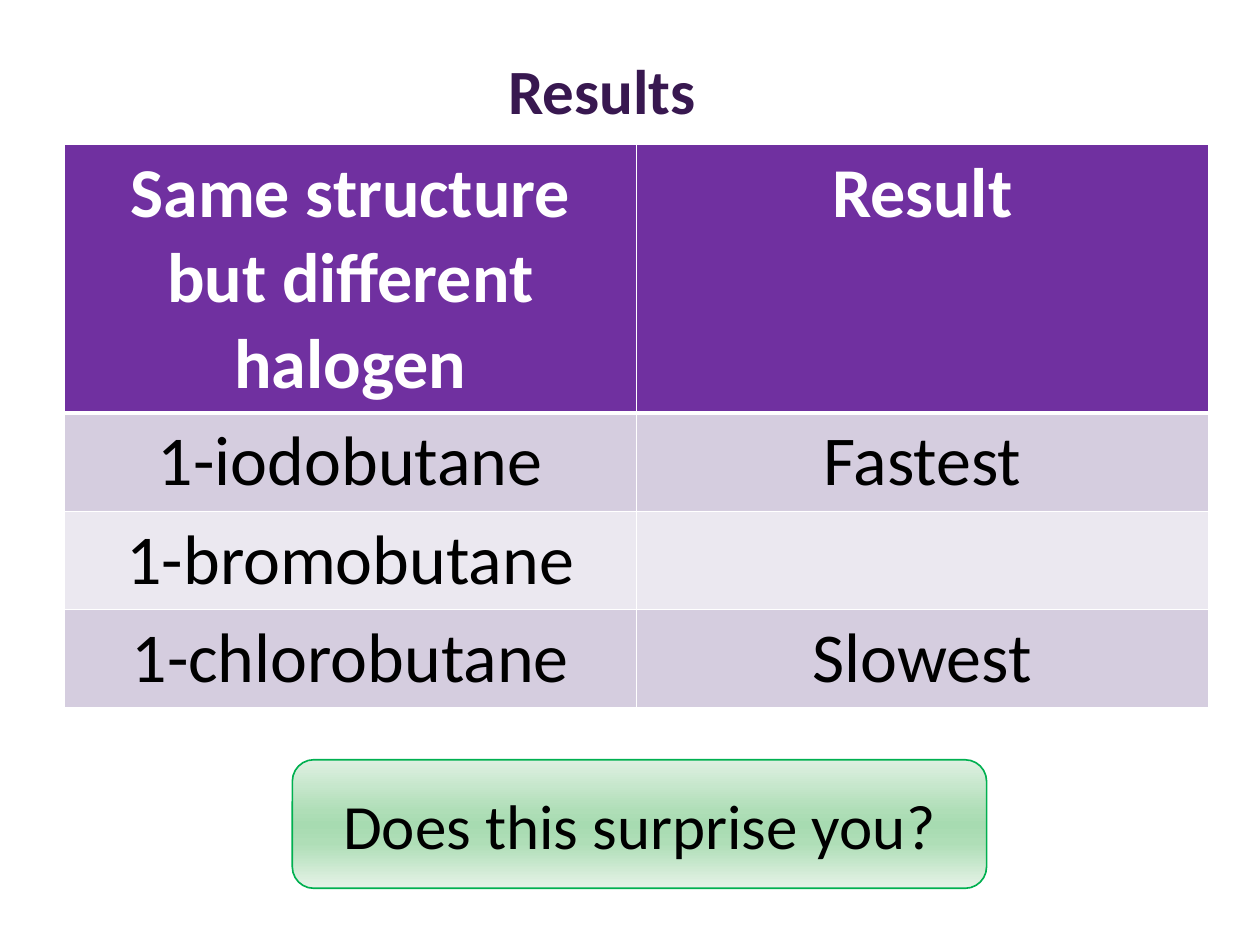
from dataclasses import dataclass

from lxml.etree import SubElement
from pptx import Presentation
from pptx.dml.color import RGBColor
from pptx.enum.shapes import MSO_SHAPE as Shape
from pptx.enum.text import MSO_ANCHOR as Anchor, PP_ALIGN as Align
from pptx.oxml import parse_xml
from pptx.oxml.ns import nsdecls, qn
from pptx.util import Inches, Pt

WIDTH, HEIGHT = Inches(10), Inches(7.5)
FONT = "Calibri"
COLORS = {
    "title": "381850",
    "header": "7030A0",
    "band_dark": "D5CDDF",
    "band_light": "EBE8F0",
    "white": "FFFFFF",
    "black": "000000",
    "outline": "00B050",
}
# Gradient position in percent and colour, from top to bottom
GREEN_STOPS = [(0, "DFF0E2"), (40, "AFDEB7"), (50, "A7DBB1"), (65, "AFDEB7"), (100, "E6F3E8")]
ROWS = [
    ("Same structure but different halogen", "Result"),
    ("1-iodobutane", "Fastest"),
    ("1-bromobutane", ""),
    ("1-chlorobutane", "Slowest"),
]
HEADER_HEIGHT, BODY_HEIGHT = Inches(2.11), Inches(0.78)


@dataclass(frozen=True)
class Box:
    """A rectangle in shares of the slide's width and height."""
    left: float
    top: float
    width: float
    height: float

    def lengths(self) -> tuple:
        return (int(self.left * WIDTH), int(self.top * HEIGHT),
                int(self.width * WIDTH), int(self.height * HEIGHT))


@dataclass(frozen=True)
class TextStyle:
    size: int
    color: str
    bold: bool = False


TITLE_BOX = Box(0.028, 0.048, 0.9, 0.093)
TABLE_BOX = Box(0.051, 0.153, 0.908, 0.59)
QUESTION_BOX = Box(0.232, 0.804, 0.551, 0.136)


def rgb(name: str) -> RGBColor:
    return RGBColor.from_string(COLORS[name])


def write(text_frame, text: str, style: TextStyle) -> None:
    paragraph = text_frame.paragraphs[0]
    paragraph.alignment = Align.CENTER
    if not text:
        paragraph.font.size = Pt(style.size)
        return
    run = paragraph.add_run()
    run.text = text
    run.font.name = FONT
    run.font.size = Pt(style.size)
    run.font.bold = style.bold
    run.font.color.rgb = rgb(style.color)


def set_borders(cell, top: float, bottom: float) -> None:
    properties = cell._tc.get_or_add_tcPr()
    for index, (side, points) in enumerate([("L", 1), ("R", 1), ("T", top), ("B", bottom)]):
        properties.insert(index, parse_xml(
            f'<a:ln{side} {nsdecls("a")} w="{Pt(points)}"><a:solidFill>'
            f'<a:srgbClr val="{COLORS["white"]}"/></a:solidFill></a:ln{side}>'))


def set_gradient(shape, stops: list) -> None:
    shape.fill.gradient()
    gradient = shape._element.spPr.find(qn("a:gradFill"))
    stop_list = gradient.find(qn("a:gsLst"))
    for stop in list(stop_list):
        stop_list.remove(stop)
    for percent, color in stops:
        stop = SubElement(stop_list, qn("a:gs"), pos=str(percent * 1000))
        SubElement(stop, qn("a:srgbClr"), val=color)
    shape.fill.gradient_angle = 270


def add_title(slide) -> None:
    title = slide.shapes.title
    title.left, title.top, title.width, title.height = TITLE_BOX.lengths()
    title.text_frame.vertical_anchor = Anchor.MIDDLE
    write(title.text_frame, "Results", TextStyle(36, "title", True))


def add_results_table(slide) -> None:
    columns = len(ROWS[0])
    table = slide.shapes.add_table(len(ROWS), columns, *TABLE_BOX.lengths()).table
    for row_index, texts in enumerate(ROWS):
        is_header = row_index == 0
        table.rows[row_index].height = HEADER_HEIGHT if is_header else BODY_HEIGHT
        band = "header" if is_header else ("band_light", "band_dark")[row_index % 2]
        style = TextStyle(40, "white" if is_header else "black", is_header)
        for column_index, text in enumerate(texts):
            cell = table.cell(row_index, column_index)
            cell.fill.solid()
            cell.fill.fore_color.rgb = rgb(band)
            set_borders(cell, top=3 if row_index == 1 else 1, bottom=3 if is_header else 1)
            write(cell.text_frame, text, style)


def add_question(slide) -> None:
    question = slide.shapes.add_shape(Shape.ROUNDED_RECTANGLE, *QUESTION_BOX.lengths())
    question.shadow.inherit = False
    set_gradient(question, GREEN_STOPS)
    question.line.color.rgb = rgb("outline")
    question.line.width = Pt(0.94)
    question.text_frame.word_wrap = True
    question.text_frame.vertical_anchor = Anchor.MIDDLE
    write(question.text_frame, "Does this surprise you?", TextStyle(36, "black"))


def main() -> None:
    presentation = Presentation()
    presentation.slide_width, presentation.slide_height = WIDTH, HEIGHT
    title_only = presentation.slide_layouts[5]
    slide = presentation.slides.add_slide(title_only)
    add_title(slide)
    add_results_table(slide)
    add_question(slide)
    presentation.save("out.pptx")


if __name__ == "__main__":
    main()
